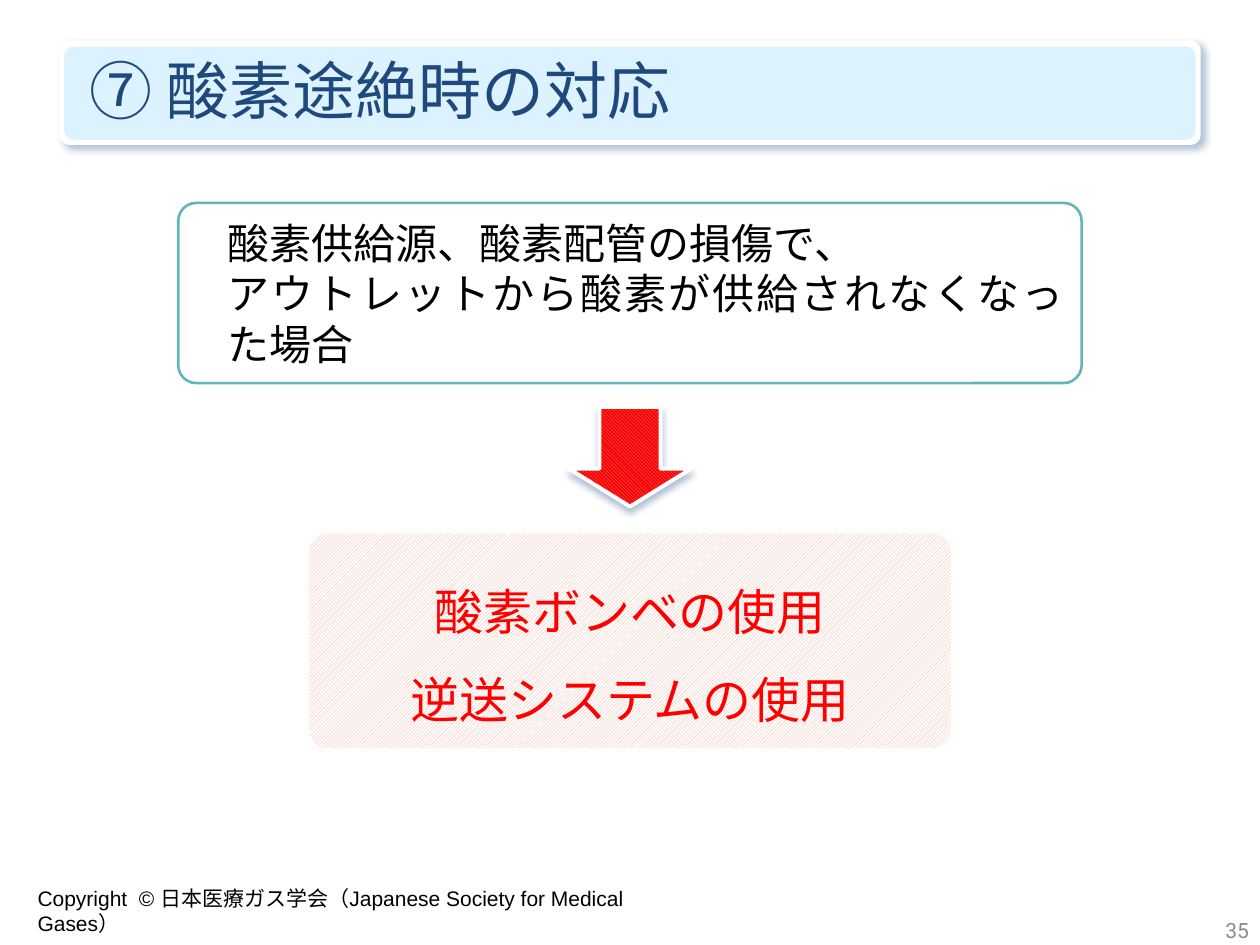
from lxml import etree
from pptx import Presentation
from pptx.dml.color import RGBColor
from pptx.enum.dml import MSO_PATTERN
from pptx.enum.shapes import MSO_SHAPE
from pptx.enum.text import MSO_ANCHOR, PP_ALIGN
from pptx.oxml.ns import qn
from pptx.util import Inches, Pt

ROUNDED = MSO_SHAPE.ROUNDED_RECTANGLE
ARROW = MSO_SHAPE.RIGHT_ARROW
UPWARD = MSO_PATTERN.LIGHT_UPWARD_DIAGONAL
DOWNWARD = MSO_PATTERN.LIGHT_DOWNWARD_DIAGONAL
TOP, MIDDLE = MSO_ANCHOR.TOP, MSO_ANCHOR.MIDDLE
LEFT, CENTER, RIGHT, JUSTIFY = PP_ALIGN.LEFT, PP_ALIGN.CENTER, PP_ALIGN.RIGHT, PP_ALIGN.JUSTIFY
WIDTH, HEIGHT = Inches(10), Inches(7.5)
JAPANESE = "Noto Sans CJK JP"
COLORS = {
    "white": "FFFFFF",
    "black": "000000",
    "banner": "DDF2FF",
    "title": "1F497D",
    "shadow": "376092",
    "teal": "63B5BA",
    "red": "FF0000",
    "rose": "D99694",
    "salmon": "F9A791",
    "gray": "8C8C8C",
}


def color(name):
    """Return the named colour."""
    return RGBColor.from_string(COLORS[name])


def place(left, top, width, height):
    """Turn percentages of the slide into a frame."""
    shares = ((left, WIDTH), (top, HEIGHT), (width, WIDTH), (height, HEIGHT))
    return [int(share * length / 100) for share, length in shares]


def centered(top, width, height):
    """Return a frame centred across the slide."""
    return place((100 - width) / 2, top, width, height)


def add_shadow(shape, opacity, angle):
    """Give a shape a soft outer shadow."""
    effects = shape._element.spPr.find(qn("a:effectLst"))
    shadow = etree.SubElement(effects, qn("a:outerShdw"), blurRad=str(Pt(4)), dist=str(Pt(3)),
                              dir=str(angle * 60000), algn="ctr", rotWithShape="0")
    tint = etree.SubElement(shadow, qn("a:srgbClr"), val=COLORS["shadow"])
    etree.SubElement(tint, qn("a:alpha"), val=str(opacity * 1000))


def add_panel(slide, kind, frame, adjustments, fill=None, pattern=None, line=None):
    """Add a preset shape with a plain, patterned or empty fill."""
    shape = slide.shapes.add_shape(kind, *frame)
    shape.shadow.inherit = False
    for index, value in enumerate(adjustments):
        shape.adjustments[index] = value
    if pattern:
        shape.fill.patterned()
        shape.fill.pattern, foreground, background = pattern
        shape.fill.fore_color.rgb = color(foreground)
        shape.fill.back_color.rgb = color(background)
    elif fill:
        shape.fill.solid()
        shape.fill.fore_color.rgb = color(fill)
    else:
        shape.fill.background()
    if line:
        name, points = line
        shape.line.color.rgb = color(name)
        shape.line.width = Pt(points)
    else:
        shape.line.fill.background()
    return shape


def add_text(slide, frame, lines, size, tint, typeface=JAPANESE, align=LEFT, spacing=1.0, **frame_format):
    """Add a wrapping text box with one paragraph for each line."""
    text_frame = slide.shapes.add_textbox(*frame).text_frame
    for name, value in {"word_wrap": True, "vertical_anchor": MIDDLE, **frame_format}.items():
        setattr(text_frame, name, value)
    for index, line in enumerate(lines):
        paragraph = text_frame.paragraphs[0] if index == 0 else text_frame.add_paragraph()
        paragraph.alignment, paragraph.line_spacing = align, spacing
        run = paragraph.add_run()
        run.text = line
        for name, value in {"size": Pt(size), "name": typeface}.items():
            setattr(run.font, name, value)
        run.font.color.rgb = color(tint)
        etree.SubElement(run._r.get_or_add_rPr(), qn("a:ea"), typeface=JAPANESE)


def add_title(slide):
    """Add the title banner."""
    banner = add_panel(slide, ROUNDED, centered(4.27, 90.6, 11.07), [0.1], fill="white")
    add_shadow(banner, 36, 45)
    add_panel(slide, ROUNDED, centered(4.93, 89.8, 9.87), [0.1], fill="banner")
    add_text(slide, place(5.1, 4.8, 87.8, 10), ["⑦ 酸素途絶時の対応"], 36, "title",
             margin_left=Inches(0.2), margin_top=0)


def add_situation(slide):
    """Add the outlined description of the situation."""
    add_panel(slide, ROUNDED, centered(21.47, 71.7, 19.07), [0.1], line=("teal", 1.5))
    add_text(slide, place(17.1, 23.07, 68.3, 15.87),
             ["酸素供給源、酸素配管の損傷で、", "アウトレットから酸素が供給されなくなった場合"],
             24, "black", align=JUSTIFY)


def add_response(slide):
    """Add the arrow and the response that it leads to."""
    add_panel(slide, ROUNDED, centered(56.27, 51.2, 23.07), [0.09],
              pattern=(UPWARD, "salmon", "white"), line=("white", 2))
    add_text(slide, centered(57.73, 51.2, 19.07), ["酸素ボンベの使用", "逆送システムの使用"],
             28, "red", align=CENTER, spacing=1.5, vertical_anchor=TOP)
    arrow = add_panel(slide, ARROW, centered(41.87, 7.9, 12.93), [0.5, 0.38],
                      pattern=(DOWNWARD, "rose", "red"), line=("white", 2.25))
    arrow.rotation = 90
    add_shadow(arrow, 40, 90)


def add_footer(slide):
    """Add the copyright line and the slide number."""
    add_text(slide, place(2, 93.07, 54, 4),
             ["Copyright  © 日本医療ガス学会（Japanese Society for Medical Gases）"],
             12, "black", "Arial", vertical_anchor=TOP)
    add_text(slide, place(87.4, 95.73, 12.7, 5.33), ["35"], 12, "gray", "Roboto", align=RIGHT)


def main():
    """Build and save the slide."""
    presentation = Presentation()
    presentation.slide_width, presentation.slide_height = WIDTH, HEIGHT
    slide = presentation.slides.add_slide(presentation.slide_layouts[6])
    for add_part in (add_title, add_situation, add_response, add_footer):
        add_part(slide)
    presentation.save("out.pptx")


if __name__ == "__main__":
    main()
